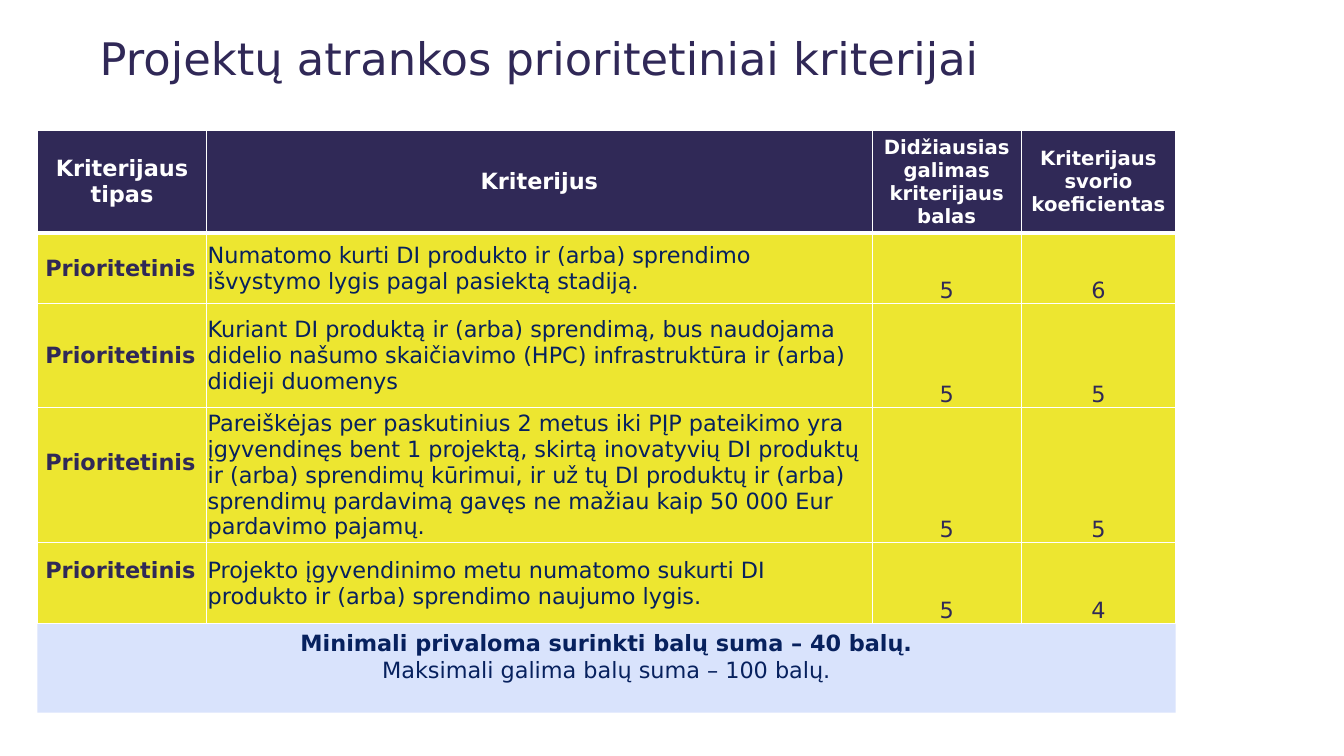
from dataclasses import dataclass

from lxml import etree
from pptx import Presentation
from pptx.dml.color import RGBColor
from pptx.enum.shapes import MSO_SHAPE
from pptx.enum.text import MSO_ANCHOR, PP_ALIGN
from pptx.oxml.ns import qn
from pptx.util import Inches, Pt

LEFT, CENTER = PP_ALIGN.LEFT, PP_ALIGN.CENTER
TOP, MIDDLE, BOTTOM = MSO_ANCHOR.TOP, MSO_ANCHOR.MIDDLE, MSO_ANCHOR.BOTTOM
RECTANGLE = MSO_SHAPE.RECTANGLE


@dataclass(frozen=True)
class Theme:
    font: str = "DejaVu Sans"
    title_color: str = "302857"
    purple: str = "302957"
    navy: str = "07215E"
    yellow: str = "EDE630"
    pale_blue: str = "D9E3FC"
    white: str = "FFFFFF"
    title_size: int = 32
    body_size: int = 16
    small_size: int = 14


THEME = Theme()
SLIDE_WIDTH, SLIDE_HEIGHT = 13.33, 7.5
TITLE_BOX = (0.89, 0.08, 9.19, 0.99)
COLUMN_WIDTHS = (1.68, 6.6, 1.48, 1.53)
ROW_HEIGHTS = (1.02, 0.7, 1.03, 1.34, 0.8)
TABLE_BOX = (0.37, 1.29, sum(COLUMN_WIDTHS), sum(ROW_HEIGHTS))
TOTALS_BOX = (TABLE_BOX[0], TABLE_BOX[1] + TABLE_BOX[3] + 0.01, TABLE_BOX[2], 0.88)
CELL_MARGIN = 0.01
LABEL_INDENT = 0.08
LABEL_LIFT = 0.26
THIN, THICK = 1, 3

HEADERS = (
    (("Kriterijaus", "tipas"), THEME.body_size),
    (("Kriterijus",), THEME.body_size),
    (("Didžiausias galimas kriterijaus balas",), THEME.small_size),
    (("Kriterijaus svorio koeficientas",), THEME.small_size),
)
CRITERION_TYPE = "Prioritetinis"
# Criterion, highest score, weight, space kept under the type label
CRITERIA = (
    ("Numatomo kurti DI produkto ir (arba) sprendimo išvystymo lygis "
     "pagal pasiektą stadiją.", "5", "6", 0),
    ("Kuriant DI produktą ir (arba) sprendimą, bus naudojama didelio našumo "
     "skaičiavimo (HPC) infrastruktūra ir (arba) didieji duomenys", "5", "5", 0),
    ("Pareiškėjas per paskutinius 2 metus iki PĮP pateikimo yra įgyvendinęs "
     "bent 1 projektą, skirtą inovatyvių DI produktų ir (arba) sprendimų "
     "kūrimui, ir už tų DI produktų ir (arba) sprendimų pardavimą gavęs ne "
     "mažiau kaip 50 000 Eur pardavimo pajamų.", "5", "5", LABEL_LIFT),
    ("Projekto įgyvendinimo metu numatomo sukurti DI produkto ir (arba) "
     "sprendimo naujumo lygis.", "5", "4", LABEL_LIFT),
)
TOTALS = (
    ("Minimali privaloma surinkti balų suma – 40 balų.", True),
    ("Maksimali galima balų suma – 100 balų.", False),
)


def write_lines(text_frame, lines, size, color, align=LEFT):
    """Write one paragraph for each (text, bold) pair."""
    text_frame.word_wrap = True
    for index, (text, bold) in enumerate(lines):
        paragraph = text_frame.add_paragraph() if index else text_frame.paragraphs[0]
        paragraph.alignment = align
        run = paragraph.add_run()
        run.text = text
        run.font.name = THEME.font
        run.font.size = Pt(size)
        run.font.bold = bold
        run.font.color.rgb = RGBColor.from_string(color)


def add_cell_borders(cell, top, bottom):
    properties = cell._tc.get_or_add_tcPr()
    for side, width in (("L", THIN), ("R", THIN), ("T", top), ("B", bottom)):
        line = etree.SubElement(properties, qn(f"a:ln{side}"), w=str(Pt(width)))
        fill = etree.SubElement(line, qn("a:solidFill"))
        etree.SubElement(fill, qn("a:srgbClr"), val=THEME.white)


def style_cell(cell, fill, anchor, top=THIN, bottom=THIN):
    add_cell_borders(cell, top, bottom)
    cell.fill.solid()
    cell.fill.fore_color.rgb = RGBColor.from_string(fill)
    cell.vertical_anchor = anchor
    cell.margin_left = cell.margin_right = cell.margin_top = Inches(CELL_MARGIN)
    cell.margin_bottom = 0


def add_title(slide, box):
    shape = slide.shapes.add_textbox(*map(Inches, box))
    shape.text_frame.vertical_anchor = MIDDLE
    lines = [("Projektų atrankos prioritetiniai kriterijai", False)]
    write_lines(shape.text_frame, lines, THEME.title_size, THEME.title_color)


def fill_header(table):
    for column, (lines, size) in enumerate(HEADERS):
        cell = table.cell(0, column)
        style_cell(cell, THEME.purple, MIDDLE, bottom=THICK)
        bold_lines = [(line, True) for line in lines]
        write_lines(cell.text_frame, bold_lines, size, THEME.white, CENTER)


def fill_criterion(table, row, criterion, score, weight, label_space):
    columns = (
        (CRITERION_TYPE, True, THEME.purple, LEFT, MIDDLE),
        (criterion, False, THEME.navy, LEFT, MIDDLE),
        (score, False, THEME.purple, CENTER, BOTTOM),
        (weight, False, THEME.purple, CENTER, BOTTOM),
    )
    for column, (text, bold, color, align, anchor) in enumerate(columns):
        cell = table.cell(row, column)
        style_cell(cell, THEME.yellow, anchor, top=THICK if row == 1 else THIN)
        write_lines(cell.text_frame, [(text, bold)], THEME.body_size, color, align)
    label = table.cell(row, 0)
    label.margin_left = Inches(LABEL_INDENT)
    label.margin_bottom = Inches(label_space)


def add_criteria_table(slide, box):
    frame = slide.shapes.add_table(
        len(ROW_HEIGHTS), len(COLUMN_WIDTHS), *map(Inches, box))
    table = frame.table
    table.horz_banding = False
    for column, width in zip(table.columns, COLUMN_WIDTHS):
        column.width = Inches(width)
    for row, height in zip(table.rows, ROW_HEIGHTS):
        row.height = Inches(height)
    fill_header(table)
    for row, criterion in enumerate(CRITERIA, start=1):
        fill_criterion(table, row, *criterion)


def add_totals(slide, box):
    shape = slide.shapes.add_shape(RECTANGLE, *map(Inches, box))
    shape.shadow.inherit = False
    shape.fill.solid()
    shape.fill.fore_color.rgb = RGBColor.from_string(THEME.pale_blue)
    shape.line.fill.background()
    shape.text_frame.vertical_anchor = TOP
    write_lines(shape.text_frame, TOTALS, THEME.body_size, THEME.navy, CENTER)


def main():
    presentation = Presentation()
    presentation.slide_width = Inches(SLIDE_WIDTH)
    presentation.slide_height = Inches(SLIDE_HEIGHT)
    slide = presentation.slides.add_slide(presentation.slide_layouts[6])
    add_totals(slide, TOTALS_BOX)
    add_title(slide, TITLE_BOX)
    add_criteria_table(slide, TABLE_BOX)
    presentation.save("out.pptx")


if __name__ == "__main__":
    main()
